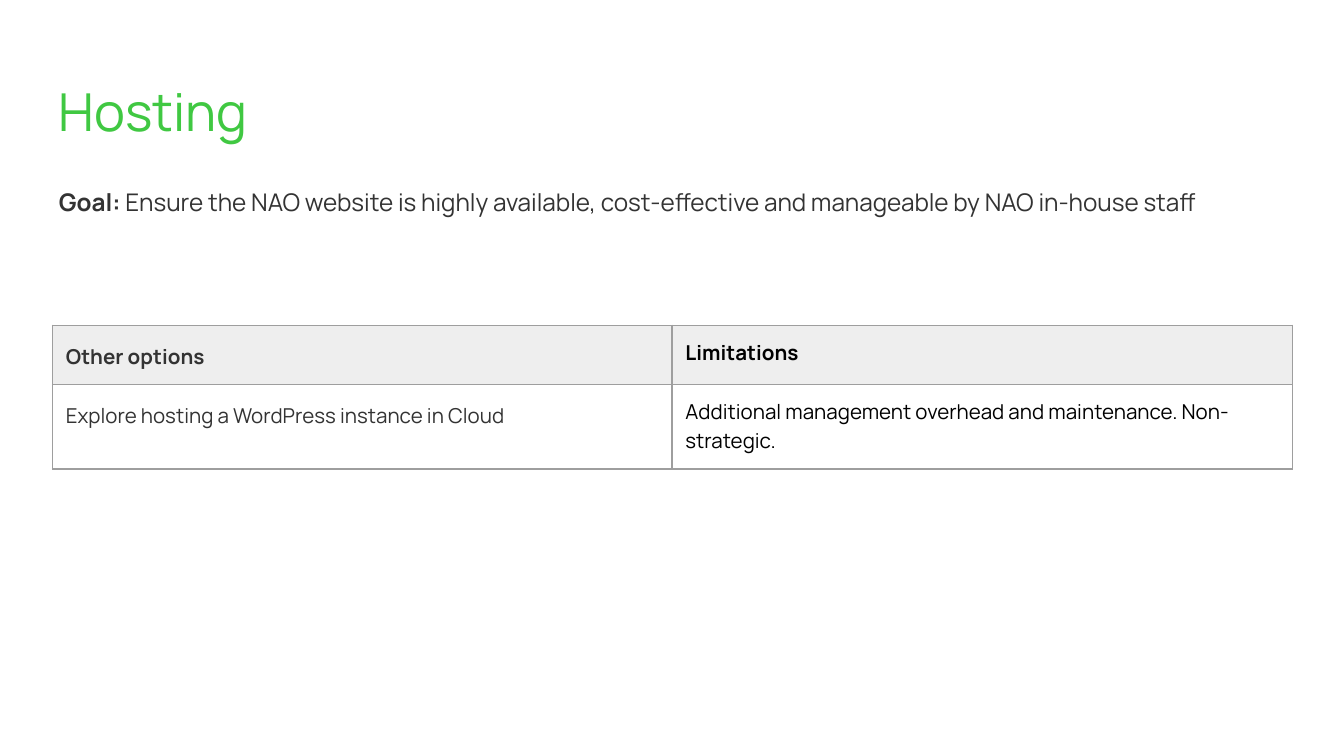
from lxml import etree
from pptx import Presentation
from pptx.dml.color import RGBColor
from pptx.enum.text import MSO_ANCHOR
from pptx.oxml.ns import qn
from pptx.util import Inches, Pt

TOP = MSO_ANCHOR.TOP
FONT = "Manrope"
GREEN, DARK, BLACK = "40C842", "333333", "000000"
HEAD, RULE = "EEEEEE", "9E9E9E"

TITLE = [("Hosting", False)]
GOAL = [
    ("Goal: ", True),
    ("Ensure the NAO website is highly available, cost-effective "
     "and manageable by NAO in-house staff", False),
]
ROWS = [
    ("Other options", "Limitations"),
    ("Explore hosting a WordPress instance in Cloud",
     "Additional management overhead and maintenance. Non-strategic."),
]
COLS = [(4.61, DARK, 1.15, 16), (4.62, BLACK, 1.0, 0)]  # width, colour, spacing, after
HEIGHTS = [0.44, 0.63]


def rgb(code):
    return RGBColor.from_string(code)


def write(frame, runs, size, color, spacing=1.0, after=0):
    para = frame.paragraphs[0]
    para.line_spacing = spacing
    para.space_after = Pt(after)
    for text, bold in runs:
        run = para.add_run()
        run.text = text
        font = run.font
        font.name, font.size, font.bold = FONT, Pt(size), bold
        font.color.rgb = rgb(color)


def pad(area):
    """Set the same margin on all sides of a text frame or cell."""
    area.margin_left = area.margin_right = Inches(0.1)
    area.margin_top = area.margin_bottom = Inches(0.1)
    area.vertical_anchor = TOP


def add_text(slide, box, *args):
    frame = slide.shapes.add_textbox(*map(Inches, box)).text_frame
    frame.word_wrap = True
    pad(frame)
    write(frame, *args)


def add_rules(cell):
    """Draw a thin line on all four sides of a cell."""
    props = cell._tc.get_or_add_tcPr()
    for i, side in enumerate("LRTB"):
        line = etree.Element(qn("a:ln" + side), w=str(Pt(0.75)))
        fill = etree.SubElement(line, qn("a:solidFill"))
        etree.SubElement(fill, qn("a:srgbClr"), val=RULE)
        props.insert(i, line)


def add_grid(slide):
    width = sum(col[0] for col in COLS)
    grid = slide.shapes.add_table(
        len(ROWS), len(COLS), Inches(0.39), Inches(2.42),
        Inches(width), Inches(sum(HEIGHTS))).table
    grid.first_row = grid.horz_banding = False
    for c, col in enumerate(COLS):
        grid.columns[c].width = Inches(col[0])
    for r, texts in enumerate(ROWS):
        grid.rows[r].height = Inches(HEIGHTS[r])
        for c, (text, (_, color, spacing, after)) in enumerate(zip(texts, COLS)):
            cell = grid.cell(r, c)
            pad(cell)
            if r == 0:
                cell.fill.solid()
                cell.fill.fore_color.rgb = rgb(HEAD)
            else:
                cell.fill.background()
            add_rules(cell)
            write(cell.text_frame, [(text, r == 0)], 11, color, spacing, after)


deck = Presentation()
deck.slide_width = Inches(10)
deck.slide_height = deck.slide_width * 9 // 16
slide = deck.slides.add_slide(deck.slide_layouts[6])
add_text(slide, (0.34, 0.49, 9.32, 0.63), TITLE, 28, GREEN)
add_text(slide, (0.34, 1.26, 9.32, 3.74), GOAL, 13, DARK, 1.15)
add_grid(slide)
deck.save("out.pptx")
